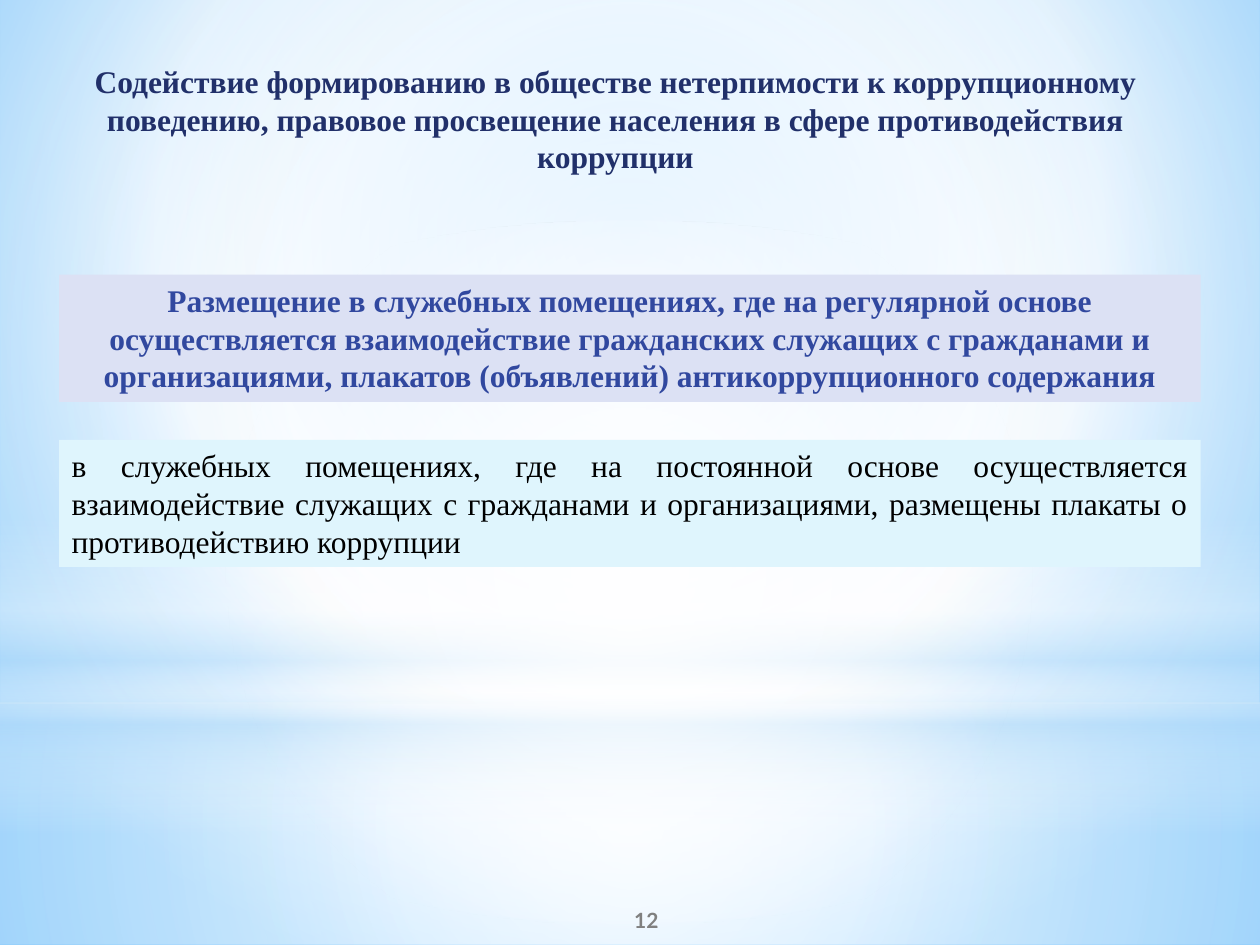
from dataclasses import dataclass

from lxml.etree import SubElement
from pptx import Presentation
from pptx.dml.color import RGBColor
from pptx.enum.shapes import MSO_SHAPE as Shape
from pptx.enum.text import MSO_ANCHOR as Anchor, MSO_AUTO_SIZE as AutoSize, PP_ALIGN as Align
from pptx.oxml.ns import qn
from pptx.util import Inches, Pt


@dataclass(frozen=True)
class Theme:
    font: str = "Times New Roman"
    number_font: str = "Lato"
    text_size: int = 18
    number_size: int = 12
    title: str = "21306A"
    heading: str = "31489F"
    heading_fill: str = "DCE1F4"
    body: str = "000000"
    body_fill: str = "DFF5FD"
    number: str = "808080"
    white: str = "FFFFFF"
    haze: str = "B4DCFA"
    sky: str = "9ED5FF"
    deep_sky: str = "5BB9FF"


THEME = Theme()
CENTRE = (50, 50, 50, 50)


def set_gradient(owner, stops, focus=None, angle=90):
    """Fill with (position, colour, opacity) stops: circular if focus is given, else linear."""
    solid = owner.find(".//" + qn("a:solidFill"))
    gradient = solid.makeelement(qn("a:gradFill"), {"rotWithShape": "1"})
    solid.getparent().replace(solid, gradient)
    stop_list = SubElement(gradient, qn("a:gsLst"))
    for position, colour, opacity in stops:
        stop = SubElement(stop_list, qn("a:gs"), pos=str(position * 1000))
        tint = SubElement(stop, qn("a:srgbClr"), val=colour)
        if opacity < 100:
            SubElement(tint, qn("a:alpha"), val=str(opacity * 1000))
    if focus:
        circle = SubElement(gradient, qn("a:path"), {"path": "circle"})
        edges = {side: str(share * 1000) for side, share in zip("ltrb", focus)}
        SubElement(circle, qn("a:fillToRect"), edges)
    else:
        SubElement(gradient, qn("a:lin"), ang=str(angle * 60000), scaled="0")


def add_panel(page, kind, left, top, width, height, colour):
    panel = page.shapes.add_shape(kind, Inches(left), Inches(top), Inches(width), Inches(height))
    panel.shadow.inherit = False
    panel.fill.solid()
    panel.fill.fore_color.rgb = RGBColor.from_string(colour)
    panel.line.fill.background()
    return panel


def add_glow(page, kind, top, height, stops, focus=None):
    glow = add_panel(page, kind, 0, top, 10, height, THEME.white)
    set_gradient(glow.element, stops, focus)


def set_text(box, text, colour, bold=True, align=Align.CENTER, anchor=Anchor.TOP,
             font=THEME.font, size=THEME.text_size):
    frame = box.text_frame
    frame.word_wrap = True
    frame.auto_size = AutoSize.NONE
    frame.vertical_anchor = anchor
    para = frame.paragraphs[0]
    para.text = text
    para.alignment = align
    para.font.name = font
    para.font.size = Pt(size)
    para.font.bold = bold
    para.font.color.rgb = RGBColor.from_string(colour)


def add_background(page):
    page.background.fill.solid()
    set_gradient(page.element,
                 [(0, THEME.sky, 100), (60, THEME.white, 100), (100, THEME.deep_sky, 100)],
                 (20, 10, 20, 60))
    white, haze = THEME.white, THEME.haze
    # Floor and wall
    add_glow(page, Shape.RECTANGLE, 5.58, 1.92,
             [(0, white, 91), (37, white, 76), (100, haze, 79)], CENTRE)
    add_glow(page, Shape.RECTANGLE, 0, 5.58,
             [(0, white, 89), (48, white, 62), (100, haze, 79)], CENTRE)
    # Horizon band
    add_glow(page, Shape.RECTANGLE, 4.12, 2.5,
             [(0, white, 0), (29, white, 30), (45, haze, 40),
              (55, white, 26), (65, haze, 60), (100, white, 0)])
    # Central light
    add_glow(page, Shape.OVAL, 1.75, 5.58, [(0, white, 100), (56, white, 0)], CENTRE)


def add_title(page, text):
    title = page.shapes.title
    title.left, title.top = Inches(0.16), Inches(0.44)
    title.width, title.height = Inches(9.45), Inches(1.01)
    set_text(title, text, THEME.title)
    page.shapes.element.append(title.element)  # bring in front of the background


def add_text_panel(page, top, fill, text, colour, **style):
    panel = add_panel(page, Shape.RECTANGLE, 0.47, top, 9.06, 1.01, fill)
    set_text(panel, text, colour, **style)


def add_page_number(page, number):
    box = page.shapes.add_textbox(Inches(4.13), Inches(7.1), Inches(2), Inches(0.4))
    set_text(box, str(number), THEME.number, anchor=Anchor.MIDDLE,
             font=THEME.number_font, size=THEME.number_size)


def main():
    deck = Presentation()
    deck.slide_width, deck.slide_height = Inches(10), Inches(7.5)
    page = deck.slides.add_slide(deck.slide_layouts.get_by_name("Title Only"))

    add_background(page)

    # Measure and what was done
    add_text_panel(page, 2.18, THEME.heading_fill,
                   "Размещение в служебных помещениях, где на регулярной основе осуществляется "
                   "взаимодействие гражданских служащих с гражданами и организациями, плакатов "
                   "(объявлений) антикоррупционного содержания", THEME.heading)
    add_text_panel(page, 3.49, THEME.body_fill,
                   "в служебных помещениях, где на постоянной основе осуществляется "
                   "взаимодействие служащих с гражданами и организациями, размещены плакаты "
                   "о противодействию коррупции", THEME.body, bold=False, align=Align.JUSTIFY)

    add_title(page, "Содействие формированию в обществе нетерпимости к коррупционному поведению, "
                    "правовое просвещение населения в сфере противодействия коррупции")
    add_page_number(page, 12)
    deck.save("out.pptx")


if __name__ == "__main__":
    main()
